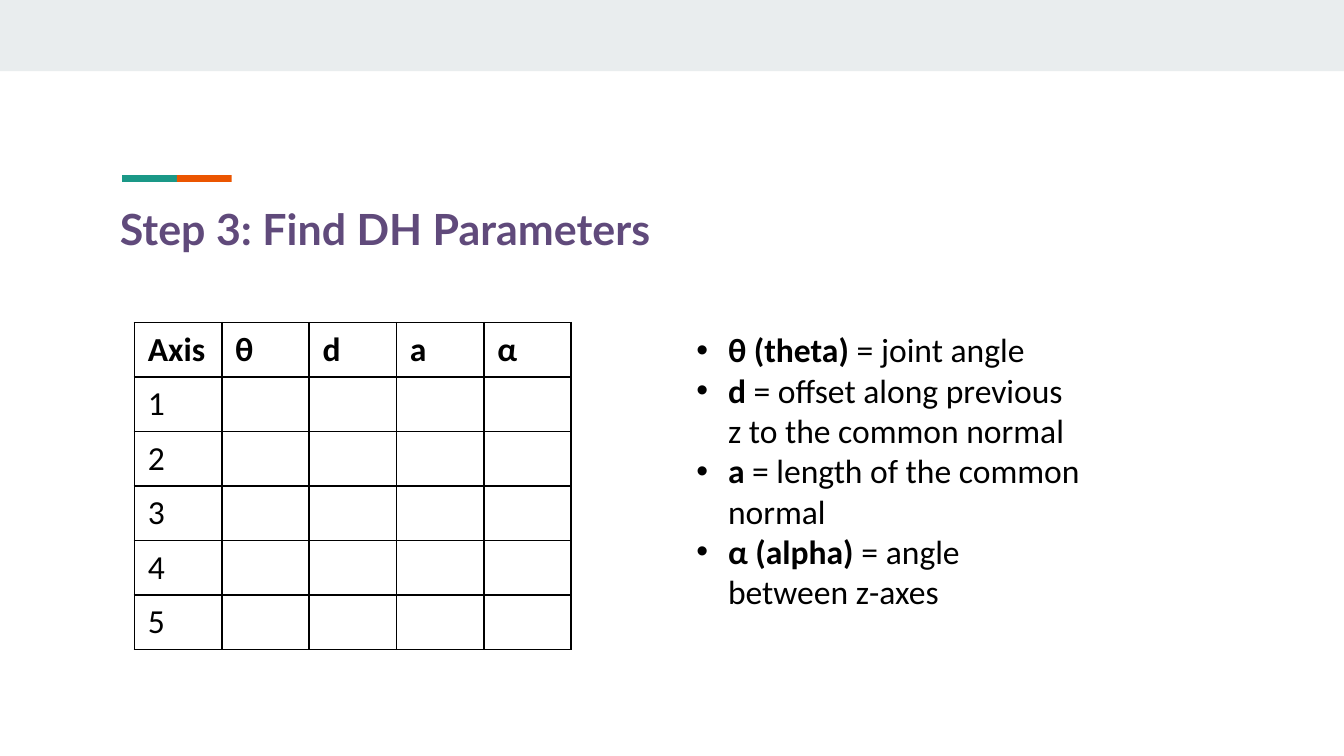
from lxml.etree import SubElement
from pptx import Presentation
from pptx.dml.color import RGBColor
from pptx.enum.shapes import MSO_SHAPE as Preset
from pptx.enum.text import MSO_ANCHOR as Anchor, MSO_AUTO_SIZE as AutoSize, PP_ALIGN as Align
from pptx.oxml.ns import qn
from pptx.util import Pt

BLACK, WHITE, PURPLE = "000000", "FFFFFF", "604A7B"
GREY, ORANGE, TEAL = "E9EDEE", "EB5500", "1A9887"
BODY_FONT = {"name": "Calibri", "size": Pt(18)}
TITLE_FONT = {"name": "Lato", "size": Pt(23), "bold": True}
HEADINGS = ["Axis", "θ", "d", "a", "α"]
AXES = ["1", "2", "3", "4", "5"]
DEFINITIONS = [
    ("θ (theta)", " = joint angle"),
    ("d", " = offset along previous z to the common normal"),
    ("a", " = length of the common normal"),
    ("α (alpha)", " = angle between z-axes"),
]


def apply(target, formats):
    """Set every attribute of the target named in formats."""
    for attribute, setting in formats.items():
        setattr(target, attribute, setting)


def paint(color_holder, color):
    """Give a fill or a font a solid colour from a hex string."""
    if hasattr(color_holder, "solid"):
        color_holder.solid()
        color_holder.fore_color.rgb = RGBColor.from_string(color)
    else:
        color_holder.color.rgb = RGBColor.from_string(color)


def place(placeholder, box):
    """Move a placeholder into the box, given in points."""
    apply(placeholder, dict(zip(("left", "top", "width", "height"), map(Pt, box))))


def write(paragraph, wording, formats, color=BLACK, bold=False):
    """Append one formatted run to a paragraph."""
    run = paragraph.add_run()
    run.text = wording
    apply(run.font, {"bold": bold, **formats})
    paint(run.font, color)


def indent(paragraph, margin, hanging=0, bullet=None):
    """Set the paragraph's margin, first-line indent and bullet."""
    properties = paragraph._p.get_or_add_pPr()
    properties.set("marL", str(Pt(margin)))
    properties.set("indent", str(-Pt(hanging)))
    if bullet:
        SubElement(properties, qn("a:buFont"), typeface="Arial")
        SubElement(properties, qn("a:buChar"), char=bullet)


def add_band(slide, box, color):
    """Draw one plain rectangle without outline."""
    band = slide.shapes.add_shape(Preset.RECTANGLE, *map(Pt, box))
    band.shadow.inherit = False
    paint(band.fill, color)
    band.line.fill.background()


def add_accent(slide, box):
    """Split the box into a teal and an orange half."""
    left, top, width, height = box
    half = width / 2
    for index, color in enumerate((TEAL, ORANGE)):
        add_band(slide, (left + index * half, top, half, height), color)


def add_title(slide, box):
    """Fill and format the title placeholder."""
    title = slide.shapes.title
    place(title, box)
    frame = title.text_frame
    apply(frame, {"margin_left": 0, "margin_top": Pt(0.7), "margin_right": 0,
                  "margin_bottom": 0, "vertical_anchor": Anchor.TOP,
                  "word_wrap": True, "auto_size": AutoSize.NONE})
    heading = frame.paragraphs[0]
    apply(heading, {"alignment": Align.LEFT, "space_before": Pt(1.1)})
    indent(heading, 11.5)
    write(heading, "Step 3: Find DH Parameters", TITLE_FONT, PURPLE)


def add_definitions(slide, box):
    """List the four parameters in the body placeholder."""
    body = slide.placeholders[1]
    place(body, box)
    frame = body.text_frame
    apply(frame, {"word_wrap": True, "auto_size": AutoSize.NONE,
                  "vertical_anchor": Anchor.TOP})
    for index, (symbol, meaning) in enumerate(DEFINITIONS):
        definition = frame.add_paragraph() if index else frame.paragraphs[0]
        apply(definition, {"alignment": Align.LEFT, "space_before": Pt(0)})
        indent(definition, 17, 17, "•")
        write(definition, symbol, BODY_FONT, bold=True)
        write(definition, meaning, BODY_FONT)


def add_borders(cell):
    """Draw a thin black line on every side of a cell."""
    properties = cell._tc.get_or_add_tcPr()
    for index, side in enumerate(("a:lnL", "a:lnR", "a:lnT", "a:lnB")):
        border = properties.makeelement(qn(side), {"w": str(Pt(1))})
        SubElement(SubElement(border, qn("a:solidFill")), qn("a:srgbClr"), val=BLACK)
        properties.insert(index, border)


def add_parameter_table(slide, box):
    """Build the DH table with one empty row per axis."""
    rows = [HEADINGS] + [[axis] + [""] * (len(HEADINGS) - 1) for axis in AXES]
    table = slide.shapes.add_table(len(rows), len(HEADINGS), *map(Pt, box)).table
    apply(table, {"first_row": False, "horz_banding": False})
    for row_index, row in enumerate(rows):
        for column_index, wording in enumerate(row):
            cell = table.cell(row_index, column_index)
            paint(cell.fill, WHITE)
            add_borders(cell)
            if wording:
                write(cell.text_frame.paragraphs[0], wording, BODY_FONT,
                      bold=row_index == 0)


def main():
    """Build and save the slide."""
    deck = Presentation()
    apply(deck, {"slide_width": Pt(720), "slide_height": Pt(405)})
    slide = deck.slides.add_slide(deck.slide_layouts[1])
    add_band(slide, (0, 0, 720, 38.2), GREY)
    add_accent(slide, (65.5, 93.8, 58.6, 3.6))
    add_title(slide, (52.7, 108, 614, 29.5))
    add_definitions(slide, (365.8, 172.8, 221.8, 181.4))
    add_parameter_table(slide, (72, 172.8, 234, 172.8))
    deck.save("out.pptx")


if __name__ == "__main__":
    main()
